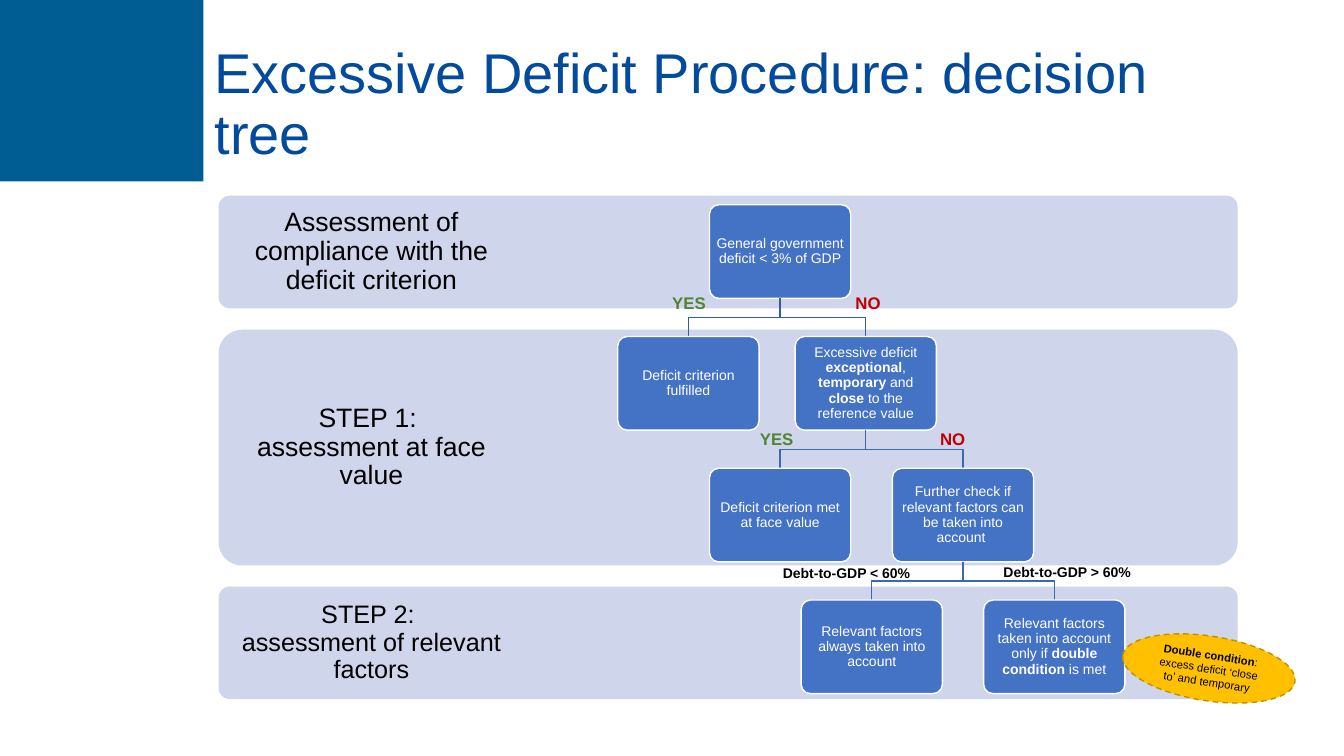
from pptx import Presentation, util as u
from pptx.dml.color import RGBColor
from pptx.enum import dml, shapes, text

BLUE = RGBColor(0x00, 0x5D, 0x94)
TITLE = RGBColor(0x02, 0x4B, 0x9C)
BAND = RGBColor(0xCF, 0xD5, 0xEA)
BOX = RGBColor(0x44, 0x72, 0xC4)
BRANCH_TOP = RGBColor(0x36, 0x5B, 0x9D)
BRANCH = RGBColor(0x3E, 0x67, 0xB2)
GREEN = RGBColor(0x54, 0x82, 0x35)
RED = RGBColor(0xC0, 0x00, 0x00)
GOLD = RGBColor(0xFF, 0xC0, 0x00)
DARK_GOLD = RGBColor(0xBF, 0x90, 0x00)
WHITE = RGBColor(0xFF, 0xFF, 0xFF)
BLACK = RGBColor(0x00, 0x00, 0x00)

BAND_LEFT, BAND_WIDTH, LABEL_WIDTH = 5.51, 25.68, 7.7
BOX_WIDTH, BOX_HEIGHT = 3.56, 2.36
FIRST_ROW, ROW_STEP = 5.16, 3.32

BANDS = [  # top, height, size, label
    (14.78, 2.84, 18, "STEP 2: \nassessment of relevant factors"),
    (8.31, 5.94, 19, "STEP 1: \nassessment at face value"),
    (4.93, 2.84, 19, "Assessment of compliance with the deficit criterion"),
]
# name: centre, row, parent, text (** switches bold)
DECISIONS = {
    "deficit": (19.66, 0, None, "General government deficit < 3% of GDP"),
    "fulfilled": (17.35, 1, "deficit", "Deficit criterion fulfilled"),
    "exceptional": (21.82, 1, "deficit", "Excessive deficit **exceptional**, **temporary** and "
                    "**close **to the reference value"),
    "met": (19.66, 2, "exceptional", "Deficit criterion met at face value"),
    "check": (24.27, 2, "exceptional",
              "Further check if relevant factors can be taken into account "),
    "always": (21.97, 3, "check", "Relevant factors always taken into account"),
    "double": (26.57, 3, "check",
               "Relevant factors taken into account only if **double condition** is met"),
}
ANSWERS = [  # left, top, width, size, colour, text
    (16.69, 7.24, 1.9, 12, GREEN, "YES"),
    (21.31, 7.24, 1.9, 12, RED, "NO"),
    (18.9, 10.67, 1.7, 12, GREEN, "YES"),
    (23.44, 10.67, 1.9, 12, RED, "NO"),
    (19.48, 14.1, 4.65, 10, BLACK, "Debt-to-GDP < 60%"),
    (25.04, 14.07, 4.65, 10, BLACK, "Debt-to-GDP > 60%"),
]


def apply(target, values):
    for name, value in values.items():
        setattr(target, name, value)


def write(shape, content, size, color, bold=False, inset=None, spacing=None, centred=False):
    frame = shape.text_frame
    frame.word_wrap = True
    frame.vertical_anchor = text.MSO_ANCHOR.MIDDLE if centred else text.MSO_ANCHOR.TOP
    if inset is not None:
        sides = ("left", "right", "top", "bottom")
        apply(frame, {f"margin_{side}": u.Cm(inset) for side in sides})
    paragraph = frame.paragraphs[0]
    paragraph.alignment = text.PP_ALIGN.CENTER if centred else text.PP_ALIGN.LEFT
    if spacing:
        paragraph.line_spacing = spacing
    for index, part in enumerate(content.split("**")):
        for number, line in enumerate(part.split("\n")):
            if number:
                paragraph.add_line_break()
            if not line:
                continue
            run = paragraph.add_run()
            run.text = line
            apply(run.font, {"name": "Arial", "size": u.Pt(size),
                             "bold": bold or index % 2 == 1})
            run.font.color.rgb = color


def add_text(slide, left, top, width, height, *args, **kwargs):
    box = slide.shapes.add_textbox(*map(u.Cm, (left, top, width, height)))
    write(box, *args, **kwargs)


def paint(shape, fill=None, line=None):
    shape.shadow.inherit = False
    if fill is None:
        shape.fill.background()
    else:
        shape.fill.solid()
        shape.fill.fore_color.rgb = fill
    if line is None:
        shape.line.fill.background()
    else:
        shape.line.color.rgb = line
        shape.line.width = u.Pt(1)


def add_shape(slide, kind, left, top, width, height, fill, line=None):
    shape = slide.shapes.add_shape(kind, *map(u.Cm, (left, top, width, height)))
    paint(shape, fill, line)
    return shape


def add_branch(slide, points, color):
    start, *others = [(u.Cm(x), u.Cm(y)) for x, y in points]
    builder = slide.shapes.build_freeform(*start)
    builder.add_line_segments(others, close=False)
    paint(builder.convert_to_shape(), line=color)


def add_band(slide, top, height, size, label):
    band = add_shape(slide, shapes.MSO_SHAPE.ROUNDED_RECTANGLE,
                     BAND_LEFT, top, BAND_WIDTH, height, BAND)
    band.adjustments[0] = 0.1
    add_text(slide, BAND_LEFT, top, LABEL_WIDTH, height, label, size, BLACK,
             inset=0.37, spacing=0.9, centred=True)


def row_top(row):
    return FIRST_ROW + ROW_STEP * row


def add_decision(slide, centre, row, parent, content):
    top = row_top(row)
    if parent:
        parent_centre, parent_row = DECISIONS[parent][:2]
        start = row_top(parent_row) + BOX_HEIGHT
        middle = (start + top) / 2
        add_branch(slide, [(parent_centre, start), (parent_centre, middle),
                           (centre, middle), (centre, top)],
                   BRANCH_TOP if row == 1 else BRANCH)
    box = add_shape(slide, shapes.MSO_SHAPE.ROUNDED_RECTANGLE,
                    centre - BOX_WIDTH / 2, top, BOX_WIDTH, BOX_HEIGHT, BOX, WHITE)
    box.adjustments[0] = 0.1
    write(box, content, 10, WHITE, inset=0.08, spacing=0.9, centred=True)


def main():
    presentation = Presentation()
    presentation.slide_width, presentation.slide_height = u.Cm(33.87), u.Cm(19.05)
    slide = presentation.slides.add_slide(presentation.slide_layouts[6])

    # Plain corner block and title
    add_shape(slide, shapes.MSO_SHAPE.RECTANGLE, 0, 0, 5.13, 4.57, BLUE)
    add_text(slide, 5.16, 1.02, 26.39, 2.74,
             "Excessive Deficit Procedure: decision tree", 40, TITLE, spacing=0.9)

    # Bands, decision tree and answers
    for band in BANDS:
        add_band(slide, *band)
    for decision in DECISIONS.values():
        add_decision(slide, *decision)
    for left, top, width, size, color, content in ANSWERS:
        add_text(slide, left, top, width, 1.2, content, size, color, bold=True)

    # Tilted remark
    remark = add_shape(slide, shapes.MSO_SHAPE.OVAL, 28.27, 16.03, 4.39, 1.63,
                       GOLD, DARK_GOLD)
    remark.rotation = 8.7
    remark.line.dash_style = dml.MSO_LINE.DASH
    write(remark, "**Double condition**: excess deficit ‘close to’ and temporary",
          8, BLACK, centred=True)

    presentation.save("out.pptx")


if __name__ == "__main__":
    main()
